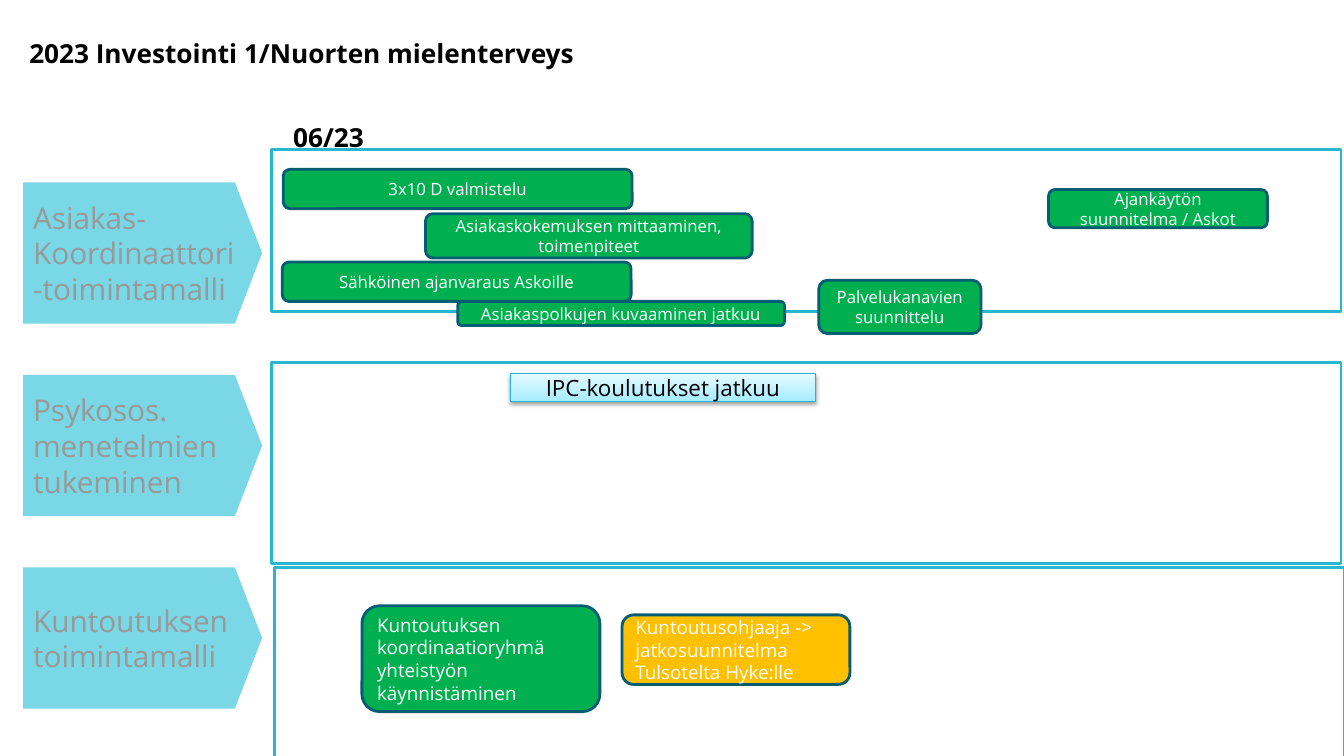
from lxml import etree
from pptx import Presentation
from pptx.dml.color import RGBColor
from pptx.enum.shapes import MSO_SHAPE
from pptx.enum.text import MSO_ANCHOR, PP_ALIGN
from pptx.oxml import parse_xml
from pptx.oxml.ns import nsdecls, qn
from pptx.util import Inches, Pt

RECTANGLE = MSO_SHAPE.RECTANGLE
ROUNDED = MSO_SHAPE.ROUNDED_RECTANGLE
PENTAGON = MSO_SHAPE.PENTAGON
LEFT, CENTER = PP_ALIGN.LEFT, PP_ALIGN.CENTER
TOP, MIDDLE = MSO_ANCHOR.TOP, MSO_ANCHOR.MIDDLE

FONT = "Open Sans"
COLORS = {
    "black": "000000", "white": "FFFFFF", "grey": "989998",
    "aqua": "7AD7E5", "teal": "28B8CE", "navy": "055D74",
    "green": "00B050", "amber": "FFC000",
    "training_line": "23B6CD", "training_bottom": "A6ECFF", "training_top": "E6FAFF",
}

TITLE = "2023 Investointi 1/Nuorten mielenterveys"
TITLE_BOX = (0.19, 0.32, 6.08, 0.41)
MONTH = "06/23"
MONTH_BOX = (2.81, 1.15, 1.11, 0.41)
TRAINING = "IPC-koulutukset jatkuu"
TRAINING_BOX = (5.06, 3.71, 3.03, 0.27)

# Each lane: label lines, frame box
LANES = [
    (["Asiakas-", "Koordinaattori", "-toimintamalli"], (2.69, 1.48, 10.61, 1.61)),
    (["Psykosos.", "menetelmien", "tukeminen"], (2.69, 3.6, 10.61, 1.99)),
    (["Kuntoutuksen", "toimintamalli"], (2.72, 5.63, 10.61, 1.99)),
]
LABEL_LEFT, LABEL_TOP, LABEL_WIDTH, LABEL_HEIGHT = 0.23, 1.81, 2.37, 1.4
LABEL_STEP = 1.91
LABEL_POINT = 0.27

# Each task: text, box, fill, text size, alignment
TASKS = [
    ("Kuntoutusohjaaja -> jatkosuunnitelma Tulsotelta Hyke:lle",
     (6.17, 6.1, 2.26, 0.69), "amber", 13.4, LEFT),
    ("3x10 D valmistelu", (2.81, 1.68, 3.46, 0.39), "green", 12, CENTER),
    ("Asiakaspolkujen kuvaaminen jatkuu", (4.54, 2.99, 3.24, 0.24), "green", 12, CENTER),
    ("Asiakaskokemuksen mittaaminen, toimenpiteet",
     (4.22, 2.12, 3.24, 0.44), "green", 12, CENTER),
    ("Palvelukanavien suunnittelu", (8.12, 2.78, 1.61, 0.53), "green", 12, CENTER),
    ("Kuntoutuksen koordinaatioryhmä yhteistyön käynnistäminen",
     (3.59, 6.01, 2.36, 1.05), "green", 13.4, LEFT),
    ("Ajankäytön suunnitelma / Askot", (10.4, 1.88, 2.17, 0.38), "green", 12, CENTER),
    ("Sähköinen ajanvaraus Askoille", (2.8, 2.6, 3.46, 0.39), "green", 12, CENTER),
]


def rgb(name):
    return RGBColor.from_string(COLORS[name])


def inches(box):
    return [Inches(value) for value in box]


def write(shape, lines, size, color, align=LEFT, anchor=MIDDLE, bold=False, right=0.1):
    frame = shape.text_frame
    frame.text = "\n".join(lines)
    frame_format = {
        "word_wrap": True, "vertical_anchor": anchor,
        "margin_left": Inches(0.1), "margin_right": Inches(right),
        "margin_top": Inches(0.05), "margin_bottom": Inches(0.05),
    }
    for name, value in frame_format.items():
        setattr(frame, name, value)
    for paragraph in frame.paragraphs:
        paragraph_format = {
            "alignment": align, "line_spacing": 1.0,
            "space_before": Pt(0), "space_after": Pt(0),
        }
        for name, value in paragraph_format.items():
            setattr(paragraph, name, value)
        for name, value in {"name": FONT, "size": Pt(size), "bold": bold}.items():
            setattr(paragraph.font, name, value)
        paragraph.font.color.rgb = rgb(color)


def add_box(slide, kind, box, fill, line=None, width=2):
    shape = slide.shapes.add_shape(kind, *inches(box))
    shape.shadow.inherit = False
    shape.fill.solid()
    shape.fill.fore_color.rgb = rgb(fill)
    if line:
        shape.line.color.rgb = rgb(line)
        shape.line.width = Pt(width)
    else:
        shape.line.fill.background()
    return shape


def add_training(slide):
    shape = add_box(slide, RECTANGLE, TRAINING_BOX, "training_top", "training_line", 0.75)
    shape.fill.gradient()
    shape.fill.gradient_angle = 90
    for stop, color in zip(shape.fill.gradient_stops, ("training_bottom", "training_top")):
        stop.color.rgb = rgb(color)
    effects = shape._element.spPr.find(qn("a:effectLst"))
    shadow = parse_xml(
        f'<a:outerShdw {nsdecls("a")} blurRad="{Pt(3.1)}" dist="{Pt(1.6)}" '
        'dir="5400000" rotWithShape="0"/>')
    color = etree.SubElement(shadow, qn("a:srgbClr"), val=COLORS["black"])
    etree.SubElement(color, qn("a:alpha"), val="38000")
    effects.append(shadow)
    write(shape, [TRAINING], 16, "black", CENTER)


def main():
    presentation = Presentation()
    presentation.slide_width = Inches(13.33)
    presentation.slide_height = Inches(7.5)
    slide = presentation.slides.add_slide(presentation.slide_layouts[5])

    title = slide.shapes.title
    title.left, title.top, title.width, title.height = inches(TITLE_BOX)
    write(title, [TITLE], 18.7, "black", anchor=TOP, bold=True)

    for index, (label, frame_box) in enumerate(LANES):
        add_box(slide, RECTANGLE, frame_box, "white", "teal")
        label_top = LABEL_TOP + index * LABEL_STEP
        arrow = add_box(slide, PENTAGON,
                        (LABEL_LEFT, label_top, LABEL_WIDTH, LABEL_HEIGHT), "aqua")
        arrow.adjustments[0] = LABEL_POINT / LABEL_HEIGHT
        write(arrow, label, 21.3, "grey", right=0)

    month = slide.shapes.add_textbox(*inches(MONTH_BOX))
    write(month, [MONTH], 18.7, "black", anchor=TOP, bold=True)

    add_training(slide)
    for text, box, fill, size, align in TASKS:
        write(add_box(slide, ROUNDED, box, fill, "navy"), [text], size, "white", align)

    presentation.save("out.pptx")


if __name__ == "__main__":
    main()
